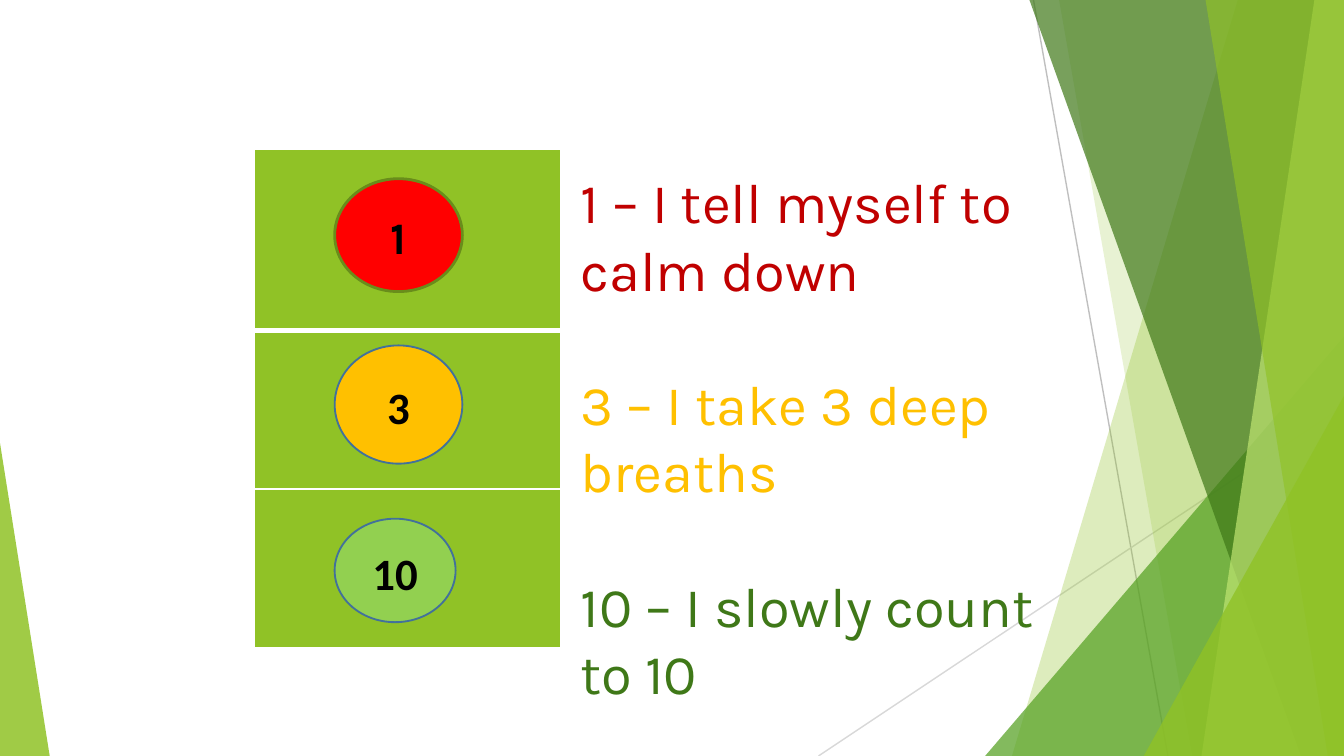
from dataclasses import dataclass

import pptx
import pptx.dml.color
import pptx.enum.shapes
import pptx.enum.text
import pptx.oxml
import pptx.oxml.ns
import pptx.util
from pptx.util import Inches

SHAPES = pptx.enum.shapes.MSO_SHAPE


@dataclass(frozen=True)
class Theme:
    lime: str = "90C226"
    pale_lime: str = "BFE471"
    green: str = "54A021"
    dark_green: str = "3F7818"
    crimson: str = "C00000"
    red: str = "FF0000"
    amber: str = "FFC000"
    light_green: str = "92D050"
    olive: str = "698D1B"
    blue: str = "42719B"
    grey: str = "BFBFBF"
    light_grey: str = "D8D8D8"
    white: str = "FFFFFF"
    black: str = "000000"
    heading_font: str = "Karla"
    number_font: str = "Calibri"
    step_size: int = 30
    number_size: int = 24
    step_gap: int = 36


THEME = Theme()


@dataclass(frozen=True)
class Box:
    left: float
    top: float
    width: float
    height: float


def rgb(color):
    return pptx.dml.color.RGBColor.from_string(color)


def paint(shape, color, opacity=100):
    """Give a shape a plain fill without line or shadow."""
    shape.shadow.inherit = False
    shape.line.fill.background()
    shape.fill.solid()
    shape.fill.fore_color.rgb = rgb(color)
    if opacity < 100:
        solid = shape.element.spPr.find(pptx.oxml.ns.qn("a:solidFill"))
        alpha = pptx.oxml.parse_xml(
            f'<a:alpha {pptx.oxml.ns.nsdecls("a")} val="{opacity * 1000}"/>')
        solid[0].append(alpha)


def add_run(paragraph, text, font, size, color, bold=False):
    run = paragraph.add_run()
    run.text = text
    run.font.name = font
    run.font.size = pptx.util.Pt(size)
    run.font.bold = bold
    run.font.color.rgb = rgb(color)


def set_insets(frame):
    frame.word_wrap = True
    frame.margin_left = frame.margin_right = Inches(0.07)
    frame.margin_top = frame.margin_bottom = Inches(0.04)


def add_hairline(slide, box, start, end, color):
    line = slide.shapes.add_connector(
        pptx.enum.shapes.MSO_CONNECTOR.STRAIGHT,
        Inches(box.left + start[0]), Inches(box.top + start[1]),
        Inches(box.left + end[0]), Inches(box.top + end[1]))
    line.line.color.rgb = rgb(color)
    line.line.width = pptx.util.Pt(0.75)
    line.element.spPr.append(pptx.oxml.parse_xml(
        f'<a:effectLst {pptx.oxml.ns.nsdecls("a")}/>'))


def add_facet(slide, box, top_x, bottom_x, color, opacity):
    """Full-height panel with a slanted left edge, reaching the right edge."""
    right, bottom = box.left + box.width, box.top + box.height
    builder = slide.shapes.build_freeform(
        Inches(box.left + top_x), Inches(box.top), scale=1.0)
    corners = [(right, box.top), (right, bottom), (box.left + bottom_x, bottom)]
    builder.add_line_segments([(Inches(x), Inches(y)) for x, y in corners])
    paint(builder.convert_to_shape(), color, opacity)


def add_corner(slide, box, left, width, height, apex, color, opacity):
    """Right triangle standing on the bottom edge."""
    triangle = slide.shapes.add_shape(
        SHAPES.ISOSCELES_TRIANGLE, Inches(box.left + left),
        Inches(box.top + box.height - height), Inches(width), Inches(height))
    triangle.adjustments[0] = apex
    paint(triangle, color, opacity)


def add_decoration(slide, box):
    add_hairline(slide, box, (7.69, 0), (8.69, box.height), THEME.grey)
    add_hairline(slide, box, (box.width, 3.02), (6.09, box.height), THEME.light_grey)
    add_facet(slide, box, 9.21, 7.53, THEME.lime, 30)
    add_facet(slide, box, 7.88, 8.87, THEME.lime, 20)
    add_corner(slide, box, 7.33, 2.67, 3.12, 1, THEME.green, 72)
    add_facet(slide, box, 7.66, 9.68, THEME.dark_green, 70)
    add_facet(slide, box, 9.78, 8.94, THEME.pale_lime, 70)
    add_facet(slide, box, 8.97, 9.88, THEME.lime, 65)
    add_corner(slide, box, 8.51, 1.49, 2.68, 1, THEME.lime, 80)
    add_corner(slide, box, 0, 0.37, 2.33, 0, THEME.lime, 85)


def style_cell(cell, top_width, bottom_width):
    properties = cell._tc.get_or_add_tcPr()
    for side, width in zip("LRTB", (1, 1, top_width, bottom_width)):
        properties.append(pptx.oxml.parse_xml(
            f'<a:ln{side} {pptx.oxml.ns.nsdecls("a")} w="{pptx.util.Pt(width)}">'
            f'<a:solidFill><a:srgbClr val="{THEME.white}"/></a:solidFill></a:ln{side}>'))
    cell.fill.solid()
    cell.fill.fore_color.rgb = rgb(THEME.lime)


def add_light(slide, box, number, font, fill, outline, outline_width):
    light = slide.shapes.add_shape(
        SHAPES.OVAL, Inches(box.left), Inches(box.top),
        Inches(box.width), Inches(box.height))
    paint(light, fill)
    light.line.color.rgb = rgb(outline)
    light.line.width = pptx.util.Pt(outline_width)
    set_insets(light.text_frame)
    light.text_frame.vertical_anchor = pptx.enum.text.MSO_ANCHOR.MIDDLE
    paragraph = light.text_frame.paragraphs[0]
    paragraph.alignment = pptx.enum.text.PP_ALIGN.CENTER
    paragraph.line_spacing = 1.07
    add_run(paragraph, number, font, THEME.number_size, THEME.black, bold=True)


def add_traffic_light(slide, box):
    # Three stacked cells, with a heavier rule under the first
    row_heights = (1.35, 1.18, 1.18)
    table = slide.shapes.add_table(
        len(row_heights), 1, Inches(box.left), Inches(box.top),
        Inches(box.width), Inches(box.height)).table
    table.first_row = table.horz_banding = False
    table.columns[0].width = Inches(box.width)
    rules = (1, 3, 1, 1)
    for index, height in enumerate(row_heights):
        table.rows[index].height = Inches(height)
        style_cell(table.cell(index, 0), rules[index], rules[index + 1])

    # Numbered lights
    lights = (
        (0.22, 0.95, 0.84, "1", THEME.heading_font, THEME.red, THEME.olive, 1.5),
        (1.46, 0.95, 0.88, "3", THEME.number_font, THEME.amber, THEME.blue, 1),
        (2.75, 0.9, 0.77, "10", THEME.number_font, THEME.light_green, THEME.blue, 1),
    )
    for top, width, height, *style in lights:
        light_box = Box(box.left + 0.6, box.top + top, width, height)
        add_light(slide, light_box, *style)


def add_steps(slide, box):
    steps = (
        (THEME.crimson, ("1 – I tell myself to", "calm down")),
        (THEME.amber, ("3 – I take 3 deep", "breaths")),
        (THEME.dark_green, ("10 – I slowly count", "to 10")),
    )
    frame = slide.shapes.add_textbox(
        Inches(box.left), Inches(box.top),
        Inches(box.width), Inches(box.height)).text_frame
    set_insets(frame)
    paragraph = frame.paragraphs[0]
    for step, (color, lines) in enumerate(steps):
        for row, line in enumerate(lines):
            if step or row:
                paragraph = frame.add_paragraph()
            if step and not row:
                paragraph.space_before = pptx.util.Pt(THEME.step_gap)
            add_run(paragraph, line, THEME.heading_font, THEME.step_size, color)


def main():
    presentation = pptx.Presentation()
    page = Box(0, 0, 10, 10 * 9 / 16)
    presentation.slide_width = Inches(page.width)
    presentation.slide_height = Inches(page.height)
    slide = presentation.slides.add_slide(presentation.slide_layouts[6])
    add_decoration(slide, page)
    add_traffic_light(slide, Box(1.89, 1.11, 2.28, 3.71))
    add_steps(slide, Box(4.25, 1.21, 5.28, 4.11))
    presentation.save("out.pptx")


if __name__ == "__main__":
    main()
